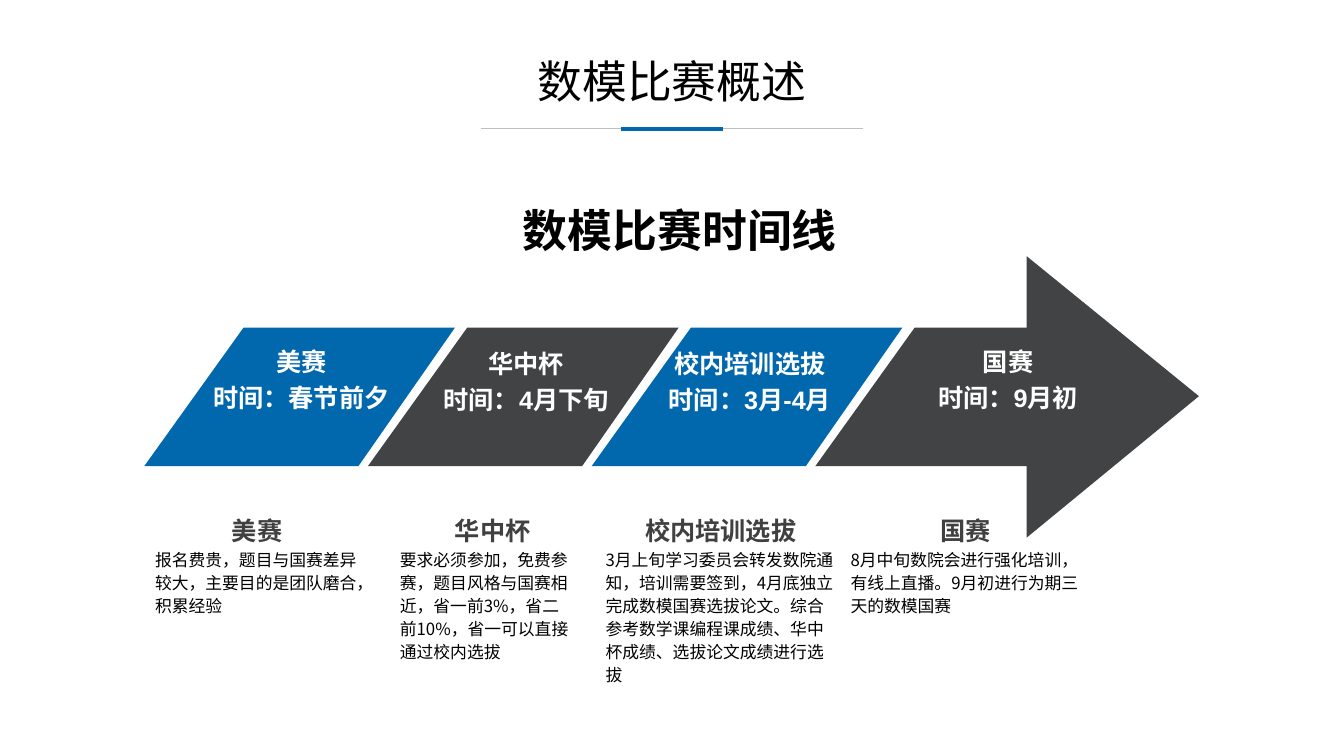
from lxml import etree
from pptx import Presentation
from pptx.dml.color import RGBColor
from pptx.enum import shapes, text
from pptx.oxml import ns
from pptx.util import Pt

BLUE, GREY, WHITE, BLACK = "0168AD", "414344", "FFFFFF", "000000"
HEADING, RULE = "404040", "BFBFBF"
SANS, CJK = "Arial", "Noto Sans CJK SC"

BAND_LEFT, BAND_TOP, BAND_HEIGHT, BAND_PITCH = 103, 234, 99, 159.8
SLANT_OUTLINE = [(153, 99), (222, 0), (71, 0), (0, 99)]
ARROW_OUTLINE = [(151, -51), (274, 49), (151, 150), (151, 99),
                 (0, 99), (71, 0), (151, 0)]

# Outline, fill, label lines, label box (left, top, width)
STAGES = [
    (SLANT_OUTLINE, BLUE, ["美赛", "时间：春节前夕"], (116.6, 239.5, 197.3)),
    (SLANT_OUTLINE, GREY, ["华中杯", "时间：4月下旬"], (277.2, 241, 197.3)),
    (SLANT_OUTLINE, BLUE, ["校内培训选拔", "时间：3月-4月"], (437, 241, 197.3)),
    (ARROW_OUTLINE, GREY, ["国赛", "时间：9月初"], (621.4, 239.5, 197.3)),
]

# Heading, heading box (left, width), body, body box (left, width)
DETAILS = [
    ("美赛", (85, 197.3),
     "报名费贵，题目与国赛差异较大，主要目的是团队磨合，积累经验", (103.7, 169.2)),
    ("华中杯", (281.5, 141),
     "要求必须参加，免费参赛，题目风格与国赛相近，省一前3%，省二前10%，"
     "省一可以直接通过校内选拔", (278.6, 136.8)),
    ("校内培训选拔", (416.2, 197.3),
     "3月上旬学习委员会转发数院通知，培训需要签到，4月底独立完成数模国赛选拔论文。"
     "综合参考数学课编程课成绩、华中杯成绩、选拔论文成绩进行选拔", (425.5, 178.6)),
    ("国赛", (591, 197.3),
     "8月中旬数院会进行强化培训，有线上直播。9月初进行为期三天的数模国赛",
     (600.5, 178.6)),
]


def colour(value):
    return RGBColor.from_string(value)


def write(frame, lines, size, ink, face=CJK, bold=False, centred=True, spacing=1.0):
    """Fill a text frame with one paragraph per line."""
    frame.vertical_anchor = text.MSO_ANCHOR.TOP
    for index, line in enumerate(lines):
        para = frame.add_paragraph() if index else frame.paragraphs[0]
        para.alignment = text.PP_ALIGN.CENTER if centred else text.PP_ALIGN.LEFT
        para.line_spacing = spacing
        span = para.add_run()
        span.text = line
        span.font.size = Pt(size)
        span.font.bold = bold
        span.font.color.rgb = colour(ink)
        span.font.name = face
        east_asian = etree.SubElement(span.font._element, ns.qn("a:ea"))
        east_asian.set("typeface", CJK)


def add_text(page, left, top, width, height, lines, size, ink, **style):
    box = page.shapes.add_textbox(Pt(left), Pt(top), Pt(width), Pt(height))
    box.text_frame.word_wrap = True
    write(box.text_frame, lines, size, ink, **style)


def add_rule(page, left, right, y, ink, weight):
    rule = page.shapes.add_connector(
        shapes.MSO_CONNECTOR.STRAIGHT, Pt(left), Pt(y), Pt(right), Pt(y))
    rule.line.color.rgb = colour(ink)
    rule.line.width = Pt(weight)
    etree.SubElement(rule._element.spPr, ns.qn("a:effectLst"))


def add_header(page, left, top, width, height):
    title = page.shapes.title
    title.left, title.top = Pt(left), Pt(top)
    title.width, title.height = Pt(width), Pt(height)
    frame = title.text_frame
    frame.auto_size = text.MSO_AUTO_SIZE.NONE
    frame.word_wrap = False
    write(frame, ["数模比赛概述"], 32, BLACK)
    centre, rule_y = left + width / 2, top + 57
    for half, ink, weight in [(136.5, RULE, 1), (36.7, BLUE, 3)]:
        add_rule(page, centre - half, centre + half, rule_y, ink, weight)


def add_band(page, left, top, outline, fill):
    """Draw one timeline segment; the outline is relative to left and top."""
    points = [(Pt(left + x), Pt(top + y)) for x, y in outline]
    builder = page.shapes.build_freeform(*points[0])
    builder.add_line_segments(points[1:], close=True)
    band = builder.convert_to_shape()
    band.shadow.inherit = False
    band.fill.solid()
    band.fill.fore_color.rgb = colour(fill)
    band.line.fill.background()


def add_timeline(page, left, top):
    for index, (outline, fill, lines, label) in enumerate(STAGES):
        add_band(page, left + index * BAND_PITCH, top, outline, fill)
        add_text(page, *label, 57.5, lines, 18, WHITE,
                 face=SANS, bold=True, spacing=1.2)


def add_details(page, top):
    for heading, heading_box, body, body_box in DETAILS:
        add_text(page, heading_box[0], top, heading_box[1], 31.5, [heading],
                 18, HEADING, face=SANS, bold=True, spacing=1.2)
        add_text(page, body_box[0], top + 27.4, body_box[1], 88, [body],
                 12, BLACK, centred=False, spacing=1.14)


def main():
    deck = Presentation()
    deck.slide_width, deck.slide_height = Pt(960), Pt(540)
    page = deck.slides.add_slide(deck.slide_layouts[5])
    add_header(page, 373.5, 35, 213, 46)
    add_text(page, 221.8, 136, 527.8, 48, ["数模比赛时间线"], 32, BLACK,
             bold=True, spacing=1.14)
    add_timeline(page, BAND_LEFT, BAND_TOP)
    add_details(page, BAND_TOP + BAND_HEIGHT + 27)
    deck.save("out.pptx")


if __name__ == "__main__":
    main()
